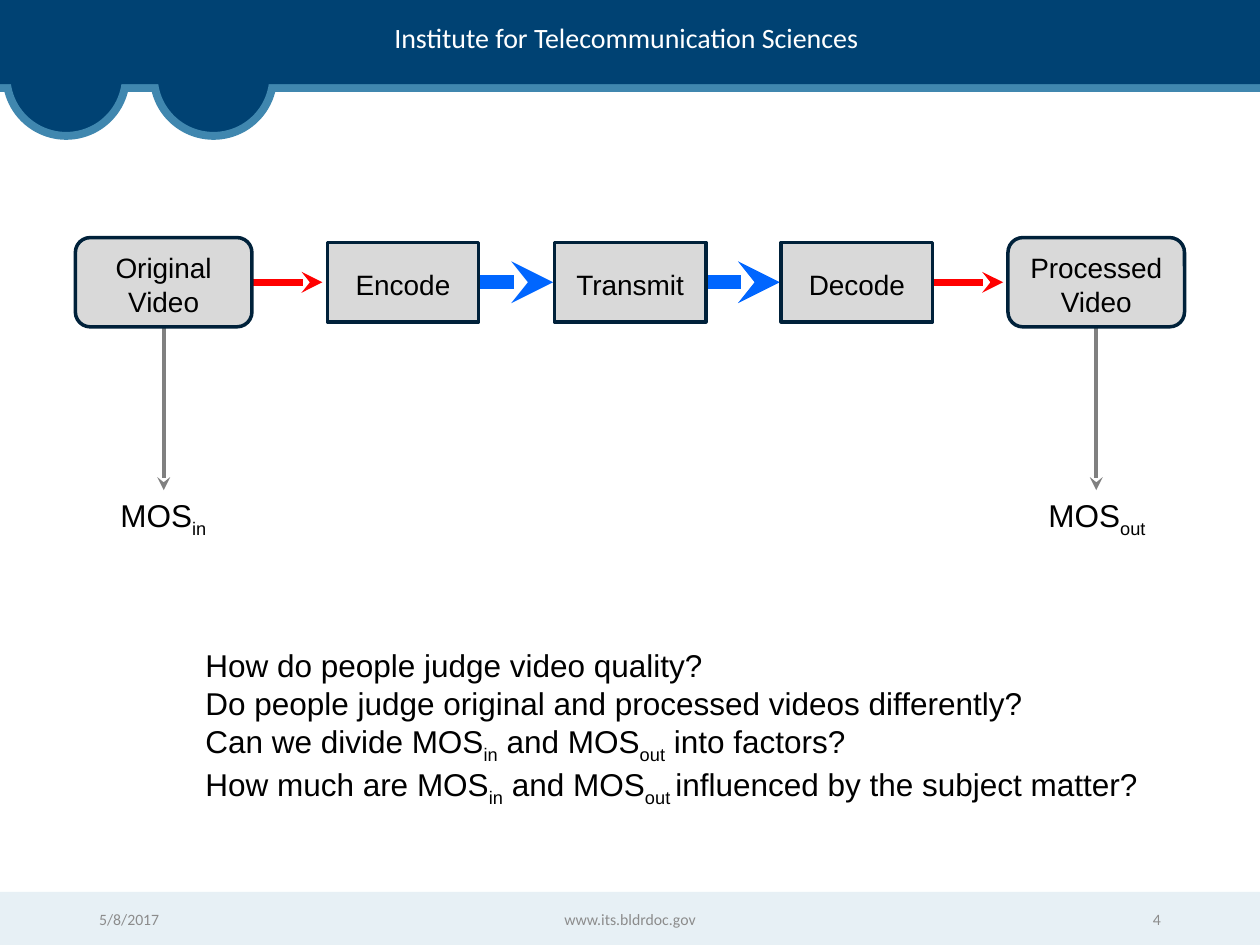
from lxml import etree
from pptx import Presentation
from pptx.dml.color import RGBColor
from pptx.enum.shapes import MSO_CONNECTOR as Line, MSO_SHAPE as Kind
from pptx.enum.text import MSO_ANCHOR as Anchor, PP_ALIGN as Align
from pptx.oxml.ns import qn
from pptx.util import Cm, Pt

NAVY = RGBColor(0x00, 0x42, 0x73)
STEEL = RGBColor(0x40, 0x87, 0xAF)
PALE = RGBColor(0xE7, 0xF0, 0xF5)
INK = RGBColor(0x00, 0x21, 0x3A)
SILVER = RGBColor(0xD9, 0xD9, 0xD9)
GRAY = RGBColor(0x80, 0x80, 0x80)
DIM = RGBColor(0x8C, 0x8C, 0x8C)
RED = RGBColor(0xFF, 0x00, 0x00)
BLUE = RGBColor(0x00, 0x66, 0xFF)
WHITE = RGBColor(0xFF, 0xFF, 0xFF)
BLACK = RGBColor(0x00, 0x00, 0x00)

deck = Presentation()
deck.slide_width, deck.slide_height = Cm(25.4), Cm(19.05)
slide = deck.slides.add_slide(deck.slide_layouts[6])
shapes = slide.shapes


def write(shape, text, size=18, font="Arial", color=BLACK,
          align=Align.LEFT, anchor=Anchor.TOP, wrap=True):
    """Fill a shape with one paragraph a line; every second part between bars is a subscript."""
    frame = shape.text_frame
    frame.word_wrap = wrap
    frame.vertical_anchor = anchor
    for i, row in enumerate(text.split("\n")):
        para = frame.add_paragraph() if i else frame.paragraphs[0]
        para.alignment = align
        for j, part in enumerate(row.split("|")):
            if not part:
                continue
            run = para.add_run()
            run.text = part
            run.font.size = Pt(size)
            run.font.name = font
            run.font.color.rgb = color
            if j % 2:
                run.font._element.set("baseline", "-25000")


def draw(x1, y1, x2, y2, color, width, head=True):
    line = shapes.add_connector(Line.STRAIGHT, Cm(x1), Cm(y1), Cm(x2), Cm(y2))
    line.line.color.rgb = color
    line.line.width = Pt(width)
    if head:
        etree.SubElement(line.line._get_or_add_ln(), qn("a:tailEnd"), type="stealth")
    etree.SubElement(line._element.spPr, qn("a:effectLst"))


# Banner and footer bands
draw(0, 1.78, 25.4, 1.78, STEEL, 4.5, head=False)
for kind, x, y, w, h, fill in [
    (Kind.OVAL, 3.1, 0.33, 2.41, 2.41, NAVY),
    (Kind.OVAL, 0.13, 0.33, 2.41, 2.41, NAVY),
    (Kind.RECTANGLE, 0, 17.98, 25.4, 1.07, PALE),
    (Kind.RECTANGLE, 0, 0, 25.4, 1.7, NAVY),
]:
    band = shapes.add_shape(kind, Cm(x), Cm(y), Cm(w), Cm(h))
    band.shadow.inherit = False
    band.fill.solid()
    band.fill.fore_color.rgb = fill
    if kind == Kind.OVAL:
        band.line.color.rgb = STEEL
        band.line.width = Pt(4.5)
    else:
        band.line.fill.background()

title = shapes.add_textbox(Cm(7.7), Cm(0.28), Cm(9.98), Cm(0.94))
write(title, "Institute for Telecommunication Sciences", size=16,
      font="Calibri", color=WHITE, wrap=False)

for text, x, w, align in [
    ("5/8/2017", 1.75, 5.72, Align.LEFT),
    ("www.its.bldrdoc.gov", 8.41, 8.58, Align.CENTER),
    ("4", 17.93, 5.72, Align.RIGHT),
]:
    box = shapes.add_textbox(Cm(x), Cm(18.03), Cm(w), Cm(1.02))
    write(box, text, size=9, font="Calibri", color=DIM, align=align, anchor=Anchor.MIDDLE)

# Video chain: arrows lie behind the boxes
MID = 5.69
for x in (3.3, 22.1):
    draw(x, 6.58, x, 9.88, GRAY, 2.5)
for x1, x2, color, width in [
    (2.69, 6.5, RED, 4),
    (7.92, 11.15, BLUE, 8),
    (12.5, 15.72, BLUE, 8),
    (16.41, 20.22, RED, 4),
]:
    draw(x1, MID, x2, MID, color, width)

ends = (Kind.ROUNDED_RECTANGLE, 3.56, 1.8)
step = (Kind.RECTANGLE, 3.05, 1.6)
for text, x, (kind, w, h) in [
    ("Original\nVideo", 1.52, ends),
    ("Encode", 6.6, step),
    ("Transmit", 11.18, step),
    ("Decode", 15.75, step),
    ("Processed Video", 20.32, ends),
]:
    node = shapes.add_shape(kind, Cm(x), Cm(MID - h / 2), Cm(w), Cm(h))
    node.shadow.inherit = False
    node.fill.solid()
    node.fill.fore_color.rgb = SILVER
    node.line.color.rgb = INK
    node.line.width = Pt(2)
    frame = node.text_frame
    frame.margin_left = frame.margin_right = frame.margin_bottom = 0
    frame.margin_top = Cm(0.08)
    write(node, text, size=16, align=Align.CENTER, anchor=Anchor.MIDDLE)

for text, x in [("MOS|in", 1.96), ("MOS|out", 20.78)]:
    score = shapes.add_textbox(Cm(x), Cm(9.88), Cm(2.67), Cm(1.02))
    write(score, text, align=Align.CENTER)

asks = shapes.add_textbox(Cm(3.89), Cm(12.9), Cm(19.53), Cm(3.33))
write(asks, """How do people judge video quality?
Do people judge original and processed videos differently?
Can we divide MOS|in| and MOS|out| into factors?
How much are MOS|in| and MOS|out |influenced by the subject matter?""")

deck.save("out.pptx")
